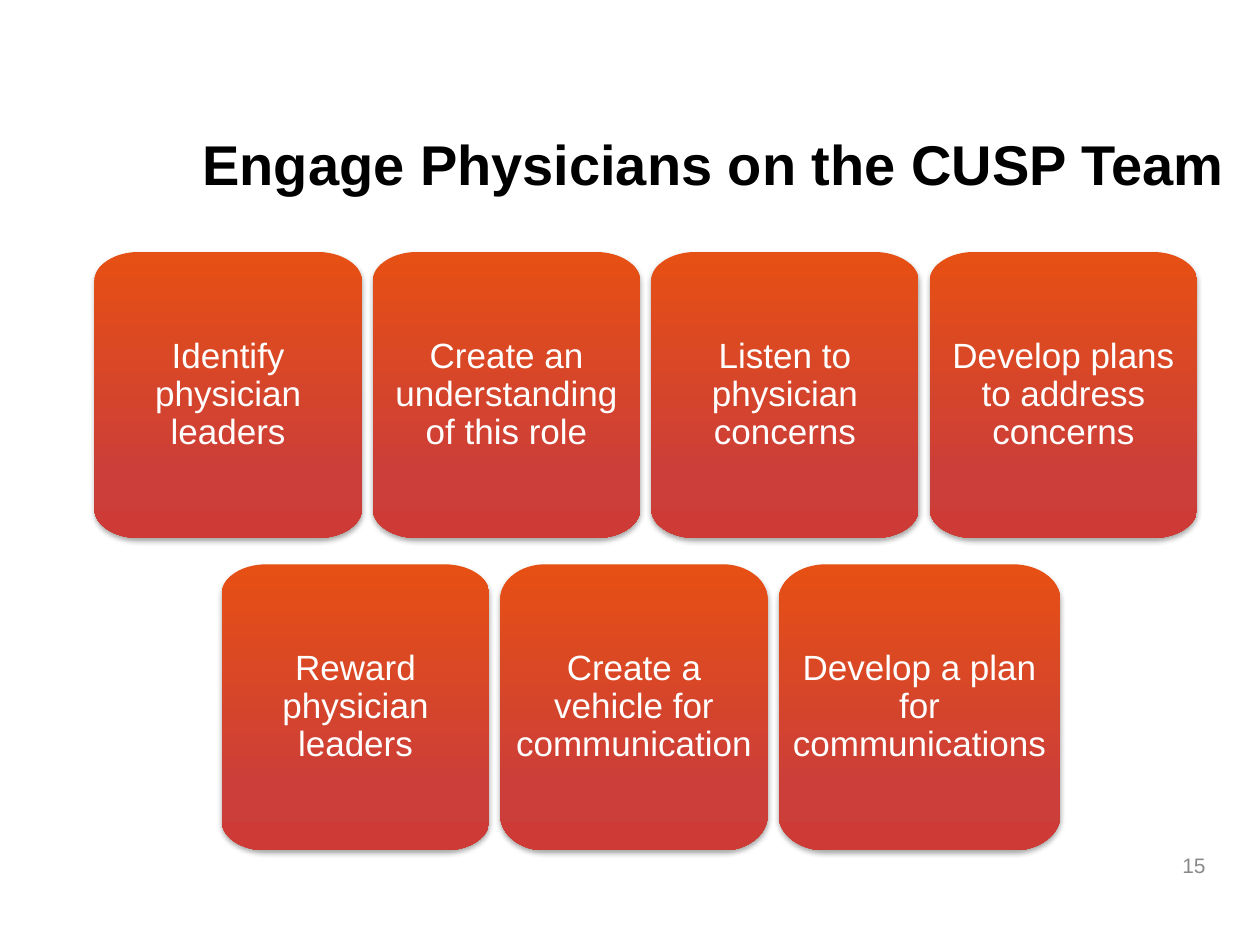
from pptx import Presentation
from pptx import util as u
from pptx.dml.color import RGBColor
from pptx.enum import text as t
from pptx.oxml import parse_xml
from pptx.oxml.ns import nsdecls

COLOURS = {"title": "000000", "number": "898989", "label": "FFFFFF",
           "top": "E65014", "lower": "CB3E3A", "bottom": "CE3B37",
           "shadow": "000000"}
GRADIENT = [(0, "top"), (80, "lower"), (100, "bottom")]
CURVE = 0.55  # control point distance that turns a cubic into a quarter ellipse

TILE_WIDTH, TILE_HEIGHT, TILE_PITCH = 152.8, 163.5, 159.1
WIDE_TILE = 160.9
FLAT_CORNER, TALL_CORNER = 16.5, 20
# Each row: left, top, then its tiles as (label, width, corner height)
ROWS = [
    (54, 144, [
        ("Identify physician leaders", TILE_WIDTH, FLAT_CORNER),
        ("Create an understanding of this role", TILE_WIDTH, FLAT_CORNER),
        ("Listen to physician concerns", TILE_WIDTH, FLAT_CORNER),
        ("Develop plans to address concerns", TILE_WIDTH, FLAT_CORNER),
    ]),
    (126.8, 322.5, [
        ("Reward physician leaders", TILE_WIDTH, FLAT_CORNER),
        ("Create a vehicle for communication", TILE_WIDTH, TALL_CORNER),
        ("Develop a plan for communications", WIDE_TILE, TALL_CORNER),
    ]),
]


def write_text(shape, words, size, colour, bold=False,
               align=t.PP_ALIGN.CENTER, inset=7.2, spacing=None):
    frame = shape.text_frame
    frame.word_wrap = True
    frame.vertical_anchor = t.MSO_ANCHOR.MIDDLE
    frame.margin_left = frame.margin_right = u.Pt(inset)
    frame.margin_top = frame.margin_bottom = u.Pt(inset)
    para = frame.paragraphs[0]
    para.alignment = align
    if spacing:
        para.line_spacing = spacing
    span = para.add_run()
    span.text = words
    span.font.name = "Arial"
    span.font.size = u.Pt(size)
    span.font.bold = bold
    span.font.color.rgb = RGBColor.from_string(COLOURS[colour])


def corner_curve(start, corner, end):
    """Return a cubic segment that rounds off a corner between two points."""
    controls = [[u.Pt(a + CURVE * (b - a)) for a, b in zip(point, corner)]
                for point in (start, end)]
    points = "".join(f'<a:pt x="{x}" y="{y}"/>'
                     for x, y in [*controls, [u.Pt(value) for value in end]])
    return parse_xml(f'<a:cubicBezTo {nsdecls("a")}>{points}</a:cubicBezTo>')


class SlideBuilder:
    """Holds the tile style and the slide being filled."""

    def __init__(self, slide):
        self.slide = slide
        stops = "".join(
            f'<a:gs pos="{place * 1000}"><a:srgbClr val="{COLOURS[name]}"/></a:gs>'
            for place, name in GRADIENT)
        self.gradient = (f'<a:gradFill {nsdecls("a")} rotWithShape="1"><a:gsLst>{stops}'
                         '</a:gsLst><a:lin ang="5400000" scaled="0"/></a:gradFill>')
        self.shadow = (f'<a:effectLst {nsdecls("a")}><a:outerShdw blurRad="{u.Pt(3.1)}" '
                       f'dist="{u.Pt(1.8)}" dir="5400000" rotWithShape="0">'
                       f'<a:srgbClr val="{COLOURS["shadow"]}"><a:alpha val="35000"/>'
                       '</a:srgbClr></a:outerShdw></a:effectLst>')

    def add_text(self, words, left, top, width, height, **style):
        box = self.slide.shapes.add_textbox(
            u.Pt(left), u.Pt(top), u.Pt(width), u.Pt(height))
        write_text(box, words, **style)

    def add_outline(self, left, top, width, height, radius_x, radius_y):
        """Add a box with elliptical corners."""
        right, low = width - radius_x, height - radius_y
        points = [(0, radius_y), (radius_x, 0), (right, 0), (width, radius_y),
                  (width, low), (right, height), (radius_x, height), (0, low)]
        corners = [(0, 0), (width, 0), (width, height), (0, height)]
        places = [(u.Pt(left + x), u.Pt(top + y)) for x, y in points]
        builder = self.slide.shapes.build_freeform(*places[0])
        builder.add_line_segments(places[1:], close=True)
        shape = builder.convert_to_shape()
        bevels = shape._element.xpath(".//a:lnTo")[::2]
        for bevel, start, corner, end in zip(bevels, points[::2], corners,
                                             points[1::2]):
            bevel.getparent().replace(bevel, corner_curve(start, corner, end))
        return shape

    def add_tile(self, label, left, top, width, corner_height):
        tile = self.add_outline(left, top, width, TILE_HEIGHT, width / 6,
                                corner_height)
        tile.line.fill.background()
        outline = tile.line._get_or_add_ln()
        outline.addprevious(parse_xml(self.gradient))
        outline.addnext(parse_xml(self.shadow))
        write_text(tile, label, size=20, colour="label", inset=7, spacing=0.9)


def main():
    deck = Presentation()
    deck.slide_width, deck.slide_height = u.Pt(720), u.Pt(540)
    page = SlideBuilder(deck.slides.add_slide(deck.slide_layouts[6]))
    page.add_text("Engage Physicians on the CUSP Team", 84, 48, 648, 90,
                  size=32, colour="title", bold=True)
    page.add_text("15", 528, 480, 168, 28.8, size=12, colour="number",
                  align=t.PP_ALIGN.RIGHT)
    for left, top, tiles in ROWS:
        for column, (label, width, corner_height) in enumerate(tiles):
            page.add_tile(label, left + column * TILE_PITCH, top, width,
                          corner_height)
    deck.save("out.pptx")


if __name__ == "__main__":
    main()
